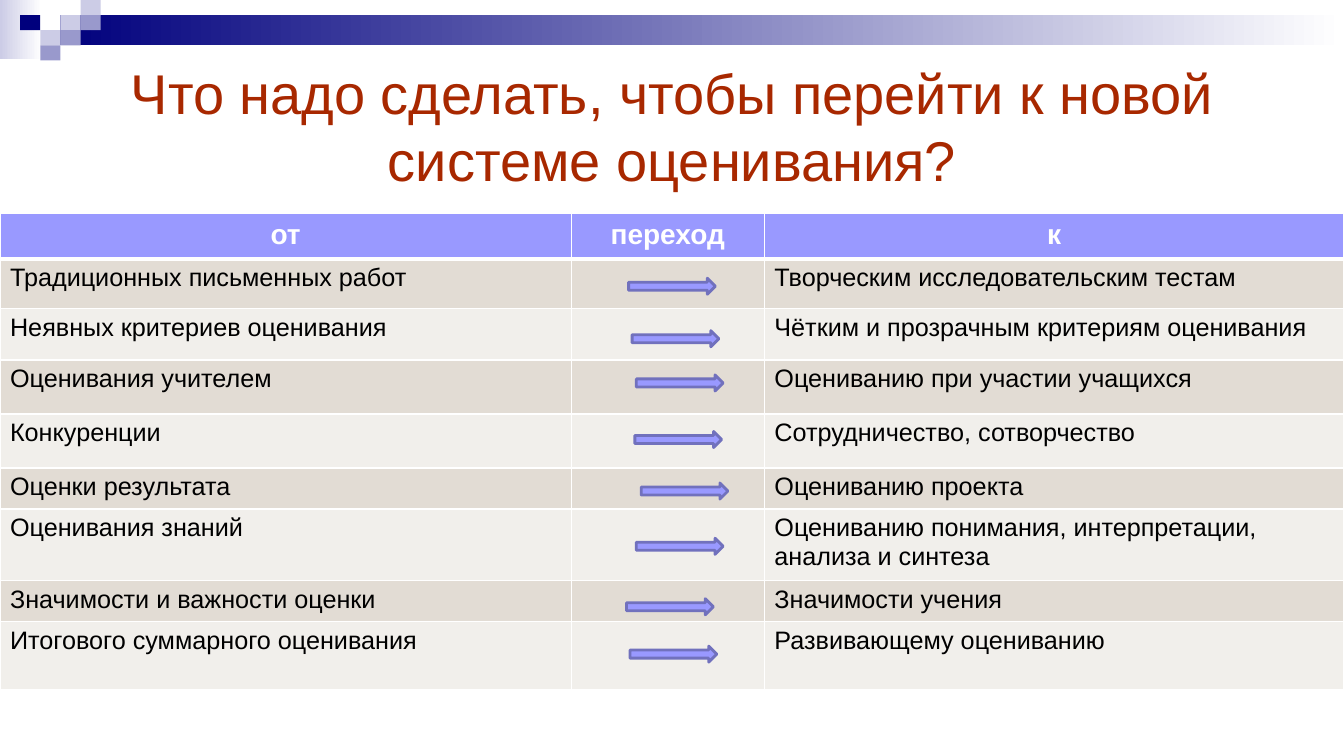
import pptx
import pptx.dml.color
import pptx.enum.shapes
import pptx.enum.text
import pptx.oxml
import pptx.oxml.ns
import pptx.util

Pt = pptx.util.Pt
SHAPE = pptx.enum.shapes.MSO_SHAPE
ALIGN = pptx.enum.text.PP_ALIGN

TITLE = "Что надо сделать, чтобы перейти к новой системе оценивания?"
HEADER = ("от", "переход", "к")
# from, to, row height, arrow left, arrow top
ROWS = [
    ("Традиционных письменных работ", "Творческим исследовательским тестам", 35.3, 449, 198.7),
    ("Неявных критериев оценивания", "Чётким и прозрачным критериям оценивания", 36.9, 451.5, 236.2),
    ("Оценивания учителем", "Оцениванию при участии учащихся", 38.6, 454.5, 267.8),
    ("Конкуренции", "Сотрудничество, сотворчество", 38.6, 453.5, 308.2),
    ("Оценки результата", "Оцениванию проекта", 28.4, 458, 345),
    ("Оценивания знаний", "Оцениванию понимания, интерпретации, анализа и синтеза", 51, 454.5, 384.5),
    ("Значимости и важности оценки", "Значимости учения", 28.4, 447.5, 427.7),
    ("Итогового суммарного оценивания", "Развивающему оцениванию", 49, 450, 461.5),
]
COL_WIDTHS = (408, 138, 414)
HEADER_HEIGHT = 32.4
TABLE_TOP = 152.6

NAVY, MID, PALE, WHITE = "00007D", "9999CC", "CCCCE6", "FFFFFF"
LILAC, LILAC_DARK = "9999FF", "7171BD"
BANDS = ("E2DCD4", "F1EFEB")

GRADIENTS = [((0, 0, 30, 42), PALE), ((43.2, 10.8, 916.8, 21.6), NAVY)]
SQUARE = (14.4, 10.8)
# column, row, colour on the grid of squares
SQUARES = [(3, 1, PALE), (4, 0, PALE), (4, 1, MID), (2, 2, PALE),
           (1, 1, NAVY), (3, 2, MID), (2, 3, MID)]


def rgb(value):
    return pptx.dml.color.RGBColor.from_string(value)


def set_attrs(obj, values):
    for name, value in values.items():
        setattr(obj, name, value)


def add_shape(s, kind, box, fill=None):
    sp = s.shapes.add_shape(kind, *map(Pt, box))
    sp.shadow.inherit = False
    sp.line.fill.background()
    if fill:
        sp.fill.solid()
        sp.fill.fore_color.rgb = rgb(fill)
    return sp


def write(tf, text, size, color, bold=False, align=ALIGN.LEFT):
    p = tf.paragraphs[0]
    p.alignment = align
    r = p.add_run()
    r.text = text
    set_attrs(r.font, {"name": "Arial", "size": Pt(size), "bold": bold})
    r.font.color.rgb = rgb(color)


def format_cell(cell, fill, top, bottom):
    """Fill the cell and give it white borders; top and bottom are widths."""
    cell.fill.solid()
    cell.fill.fore_color.rgb = rgb(fill)
    widths = {"lnL": 1, "lnR": 1, "lnT": top, "lnB": bottom}
    for i, (side, width) in enumerate(widths.items()):
        ln = pptx.oxml.parse_xml(
            f'<a:{side} {pptx.oxml.ns.nsdecls("a")} w="{Pt(width)}"><a:solidFill>'
            f'<a:srgbClr val="{WHITE}"/></a:solidFill></a:{side}>')
        cell._tc.get_or_add_tcPr().insert(i, ln)


def add_decoration(s):
    for box, color in GRADIENTS:
        sp = add_shape(s, SHAPE.RECTANGLE, box)
        sp.fill.gradient()
        sp.fill.gradient_angle = 0
        for stop, position, value in zip(sp.fill.gradient_stops, (0, 1), (color, WHITE)):
            stop.position = position
            stop.color.rgb = rgb(value)
    w, h = SQUARE
    for col, row, color in SQUARES:
        add_shape(s, SHAPE.RECTANGLE, (col * w, row * h, w, h), color)


def add_title(s):
    title = s.shapes.title
    set_attrs(title, {"left": Pt(48), "top": Pt(36), "width": Pt(864), "height": Pt(108)})
    tf = title.text_frame
    set_attrs(tf, {"word_wrap": True,
                   "auto_size": pptx.enum.text.MSO_AUTO_SIZE.NONE,
                   "vertical_anchor": pptx.enum.text.MSO_ANCHOR.MIDDLE})
    write(tf, TITLE, 40, "A82800", align=ALIGN.CENTER)


def add_transition_table(s):
    heights = [HEADER_HEIGHT] + [row[2] for row in ROWS]
    box = (0, TABLE_TOP, sum(COL_WIDTHS), sum(heights))
    table = s.shapes.add_table(len(heights), len(COL_WIDTHS), *map(Pt, box)).table
    for column, width in zip(table.columns, COL_WIDTHS):
        column.width = Pt(width)
    for row, height in zip(table.rows, heights):
        row.height = Pt(height)
    for c, text in enumerate(HEADER):
        cell = table.cell(0, c)
        format_cell(cell, LILAC, 1, 3)
        write(cell.text_frame, text, 20, WHITE, True, ALIGN.CENTER)
    for i, (old, new, *_) in enumerate(ROWS):
        for c, text in enumerate((old, "", new)):
            cell = table.cell(i + 1, c)
            format_cell(cell, BANDS[i % 2], 1 if i else 3, 1)
            if text:
                write(cell.text_frame, text, 18, "000000")


def add_arrows(s):
    for *_, left, top in ROWS:
        sp = add_shape(s, SHAPE.RIGHT_ARROW, (left, top, 62, 11.5), LILAC)
        sp.line.color.rgb = rgb(LILAC_DARK)
        sp.line.width = Pt(2)


def main():
    prs = pptx.Presentation()
    set_attrs(prs, {"slide_width": Pt(960), "slide_height": Pt(540)})
    s = prs.slides.add_slide(prs.slide_layouts[5])
    add_decoration(s)
    add_title(s)
    add_transition_table(s)
    add_arrows(s)
    prs.save("out.pptx")


if __name__ == "__main__":
    main()
